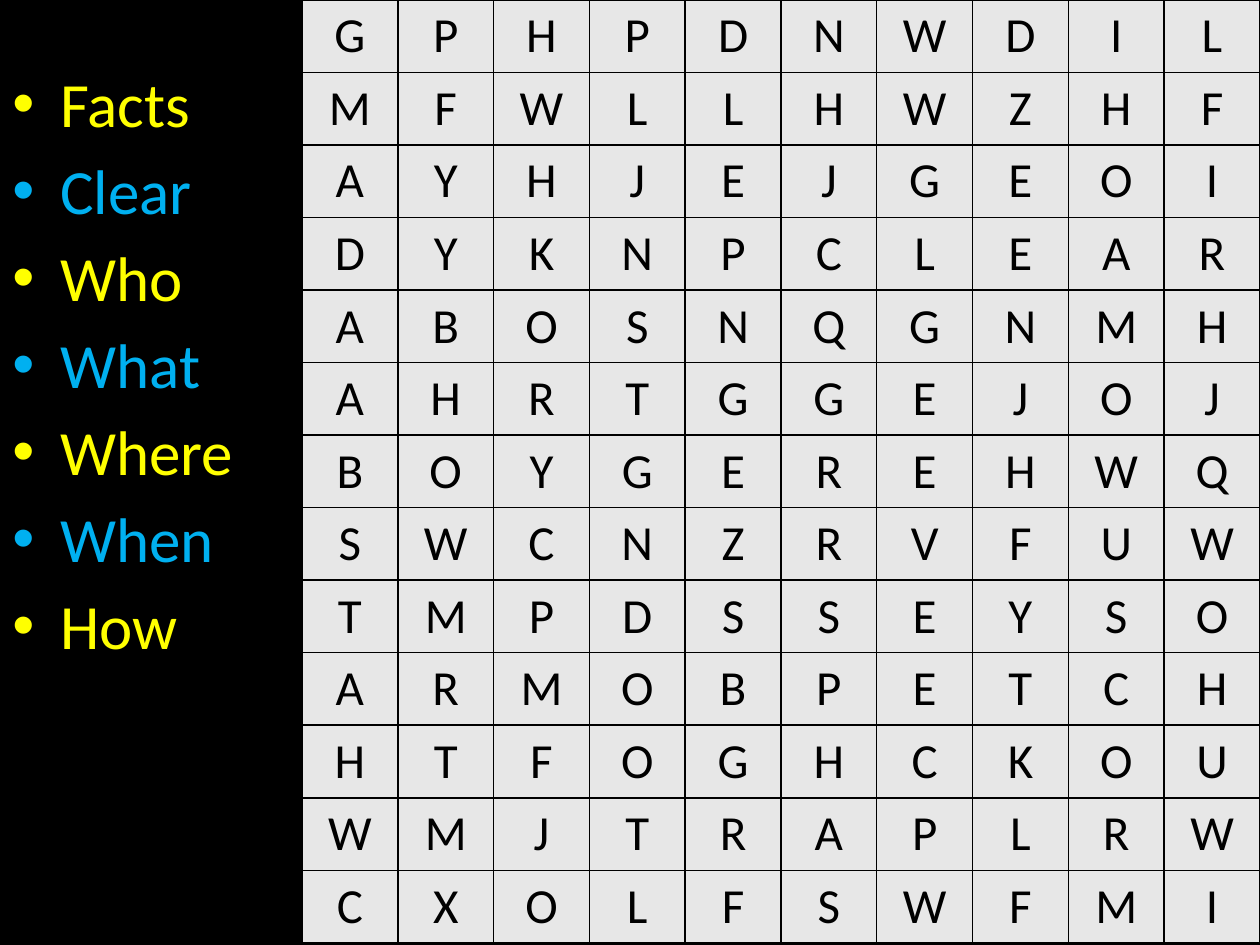
from itertools import cycle

from lxml.etree import SubElement as Sub
from pptx import Presentation
from pptx.dml.color import RGBColor as Rgb
from pptx.enum.text import MSO_ANCHOR as Anchor, PP_ALIGN as Align
from pptx.oxml.ns import qn
from pptx.util import Pt

PX = 914400 // 126
HUES = {"black": "000000", "cell": "E7E7E7", "gold": "FFFF00", "sky": "00B0F0"}
WORDS = ["Facts", "Clear", "Who", "What", "Where", "When", "How"]
ROWS = """
GPHPDNWDIL
MFWLLHWZHF
AYHJEJGEOI
DYKNPCLEAR
ABOSNQGNMH
AHRTGGEJOJ
BOYGEREHWQ
SWCNZRVFUW
TMPDSSEYSO
ARMOBPETCH
HTFOGHCKOU
WMJTRAPLRW
CXOLFSWFMI
""".split()


def line(parent, tag, width, hue):
    """Add a solid line element of the given width in points."""
    edge = Sub(parent, qn(tag), w=str(Pt(width)))
    fill = Sub(edge, qn("a:solidFill"))
    Sub(fill, qn("a:srgbClr"), val=HUES[hue])
    return edge


class Deck:
    font = "Calibri"

    def __init__(self, wide, high):
        self.file = Presentation()
        self.file.slide_width, self.file.slide_height = wide * PX, high * PX
        self.slide = self.file.slides.add_slide(self.file.slide_layouts[6])

    def back(self, hue):
        fill = self.slide.background.fill
        fill.solid()
        fill.fore_color.rgb = Rgb.from_string(HUES[hue])

    def run(self, para, text, size, hue):
        run = para.add_run()
        run.text = text
        run.font.name, run.font.size = self.font, Pt(size)
        run.font.color.rgb = Rgb.from_string(HUES[hue])
        return run

    def cell(self, cell, text):
        cell.fill.solid()
        cell.fill.fore_color.rgb = Rgb.from_string(HUES["cell"])
        para = cell.text_frame.paragraphs[0]
        para.alignment = Align.CENTER
        props = self.run(para, text, 28, "black").font.fill._xPr
        props.insert(0, line(props, "a:ln", 0.75, "black"))
        frame = cell.fill._xPr
        for spot, side in enumerate("LRTB"):
            frame.insert(spot, line(frame, f"a:ln{side}", 1, "black"))

    def grid(self, rows, x, y, wide, high):
        """Fill a table with one letter to a cell."""
        count = len(rows[0])
        table = self.slide.shapes.add_table(
            len(rows), count, x * PX, y * PX, wide * PX, high * PX).table
        table.first_row = table.horz_banding = False
        for r, row in enumerate(rows):
            for c, char in enumerate(row):
                self.cell(table.cell(r, c), char)

    def bullets(self, words, hues, x, y, wide, high, indent):
        box = self.slide.shapes.add_textbox(x * PX, y * PX, wide * PX, high * PX)
        frame = box.text_frame
        frame.word_wrap = True
        frame.vertical_anchor = Anchor.TOP
        frame.margin_top = 10 * PX
        for i, (word, hue) in enumerate(zip(words, cycle(hues))):
            para = frame.add_paragraph() if i else frame.paragraphs[0]
            props = para._p.get_or_add_pPr()
            props.set("marL", str(indent * PX))
            props.set("indent", str(-indent * PX))
            Sub(props, qn("a:buFont"), typeface="Arial")
            Sub(props, qn("a:buChar"), char="•")
            if i:
                para.space_before = Pt(6.5)
            self.run(para, word, 36, hue)


def main():
    deck = Deck(1260, 945)
    deck.back("black")
    deck.grid(ROWS, x=302, y=0, wide=958, high=929)
    deck.bullets(WORDS, ["gold", "sky"], x=0, y=55, wide=253, high=945, indent=48)
    deck.file.save("out.pptx")


if __name__ == "__main__":
    main()
